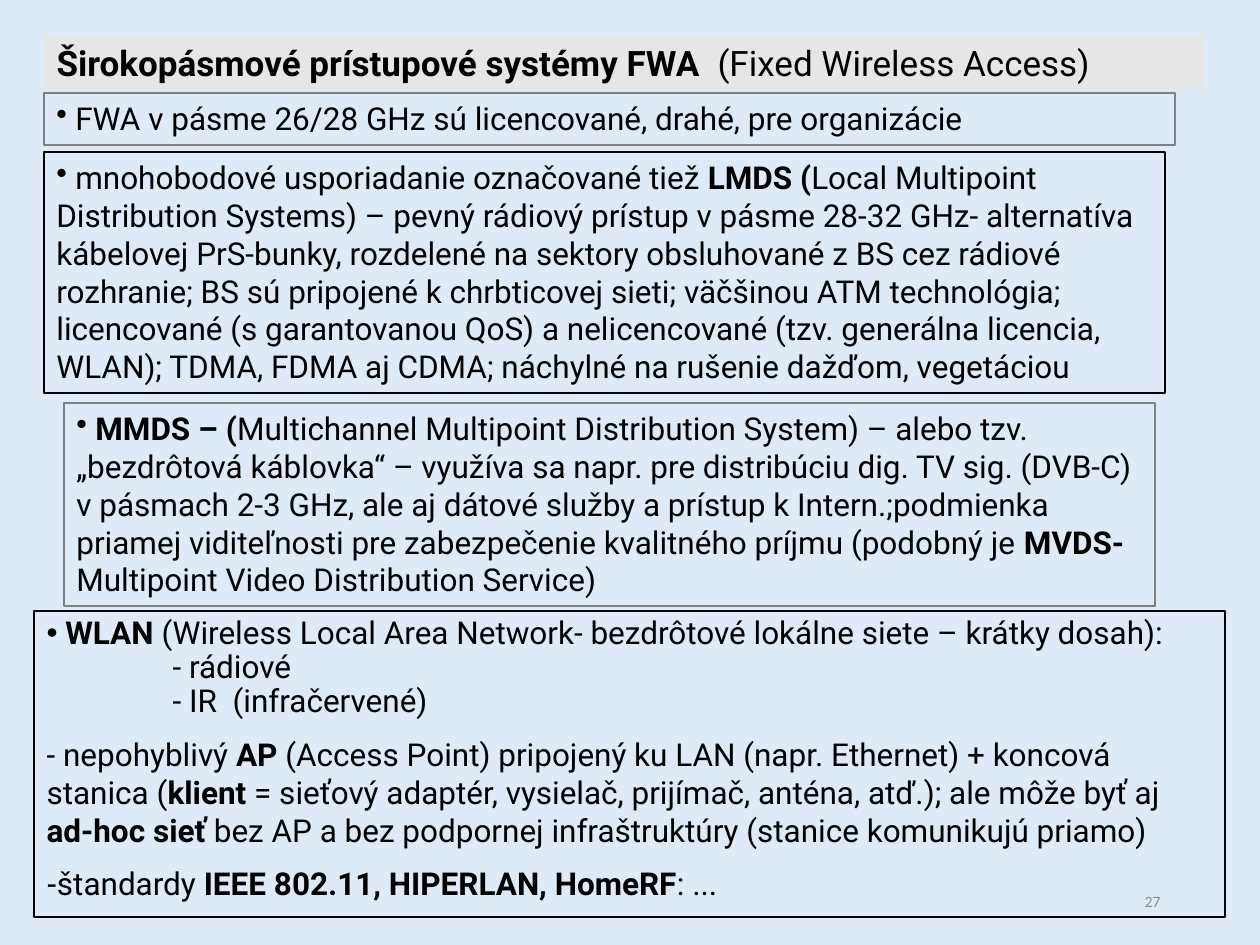
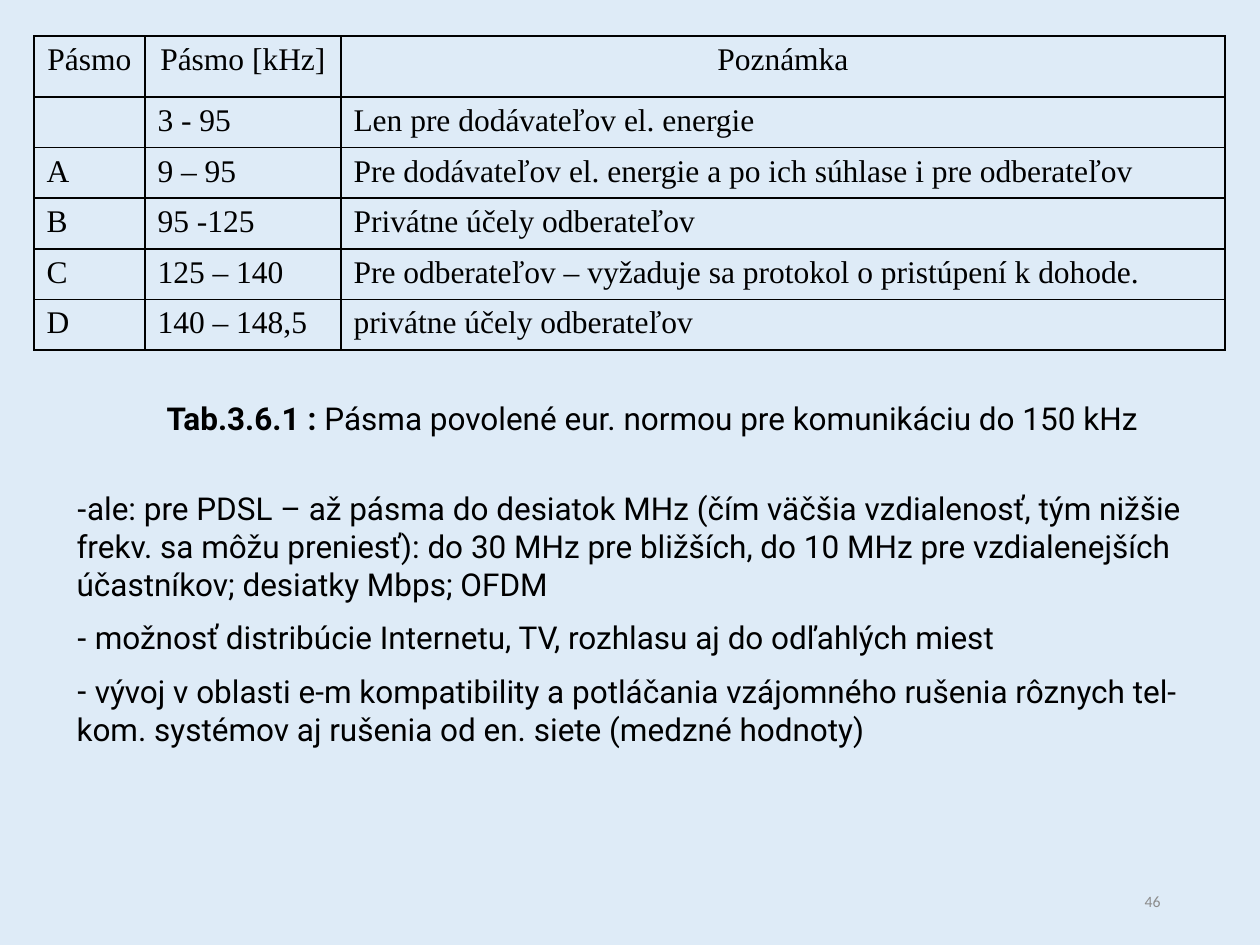
from collections import namedtuple
from dataclasses import dataclass

import lxml.etree
import pptx
import pptx.dml.color
import pptx.enum.text
import pptx.oxml.ns
import pptx.util

ALIGN = pptx.enum.text.PP_ALIGN
ANCHOR = pptx.enum.text.MSO_ANCHOR
qn = pptx.oxml.ns.qn


@dataclass(frozen=True)
class Theme:
    background: str = "DEEBF7"
    title_band: str = "E7E6E6"
    ink: str = "000000"
    gray: str = "808080"
    page_ink: str = "8C8C8C"
    text_font: str = "Roboto"
    table_font: str = "Times New Roman"
    page_font: str = "Calibri"
    title_size: int = 20
    text_size: int = 18
    page_size: int = 9
    paragraph_gap: int = 9
    outline: float = 0.75
    grid_line: int = 1


THEME = Theme()
EMU_PER_PX = 914400 / 126
SLIDE_SIZE = (1260, 945)
PAGE_BOX = (890, 876, 283, 50)
SUB_INDENT, SUB_HANG = 158, -32

# Text between ** marks is bold.
Line = namedtuple("Line", "text bullet level spacing", defaults=("", 0, None))

FWA_TITLE = "**Širokopásmové prístupové systémy FWA  **(Fixed Wireless Access)"
FWA_TITLE_BOX = (44, 35, 1160, 54)
FWA_PANELS = [
    ((44, 93, 1131, 52), THEME.gray,
     Line(" FWA v pásme 26/28 GHz sú licencované, drahé, pre organizácie", "•")),
    ((44, 152, 1121, 241), THEME.ink,
     Line(" mnohobodové usporiadanie označované tiež **LMDS (**Local Multipoint "
          "Distribution Systems) – pevný rádiový prístup v pásme 28-32 GHz- "
          "alternatíva kábelovej PrS-bunky, rozdelené na sektory obsluhované z BS "
          "cez rádiové rozhranie; BS sú pripojené k chrbticovej sieti; väčšinou ATM "
          "technológia; licencované (s garantovanou QoS) a nelicencované (tzv. "
          "generálna licencia, WLAN); TDMA, FDMA aj CDMA; náchylné na rušenie "
          "dažďom, vegetáciou", "•")),
    ((64, 403, 1091, 203), THEME.gray,
     Line("** MMDS – (**Multichannel Multipoint Distribution System) – alebo tzv. "
          "„bezdrôtová káblovka“ – využíva sa napr. pre distribúciu dig. TV sig. "
          "(DVB-C) v pásmach 2-3 GHz, ale aj dátové služby a prístup k "
          "Intern.;podmienka priamej viditeľnosti pre zabezpečenie kvalitného príjmu "
          "(podobný je **MVDS-**Multipoint Video Distribution Service)", "•")),
]
WLAN_BOX = (34, 611, 1191, 306)
WLAN = [
    Line("** WLAN** (Wireless Local Area Network- bezdrôtové lokálne siete – krátky "
         "dosah):", "•", spacing=0.9),
    Line("- rádiové", level=2, spacing=0.9),
    Line("- IR  (infračervené)", level=2, spacing=0.9),
    Line("- nepohyblivý **AP** (Access Point) pripojený ku LAN (napr. Ethernet) + "
         "koncová stanica (**klient** = sieťový adaptér, vysielač, prijímač, anténa, "
         "atď.); ale môže byť aj **ad-hoc sieť** bez AP a bez podpornej "
         "infraštruktúry (stanice komunikujú priamo)"),
    Line("štandardy **IEEE 802.11, HIPERLAN, HomeRF**: ...", "-"),
]

BANDS_BOX = (34, 36, 1191, 314)
BANDS_COLUMNS = (111, 196, 884)
BANDS_HEADER_HEIGHT = 61
BANDS = [
    ("Pásmo", "Pásmo [kHz]", "Poznámka"),
    ("", "3 - 95", "Len pre dodávateľov el. energie"),
    ("A", "9 – 95", "Pre dodávateľov el. energie a po ich súhlase i pre odberateľov"),
    ("B", "95 -125", "Privátne účely odberateľov"),
    ("C", "125 – 140", "Pre odberateľov – vyžaduje sa protokol o pristúpení k dohode."),
    ("D", "140 – 148,5", "privátne účely odberateľov"),
]
BANDS_CAPTION = ("**Tab.3.6.1 : **Pásma povolené eur. normou pre komunikáciu "
                 "do 150 kHz")
BANDS_CAPTION_BOX = (154, 393, 1022, 50)
PDSL_BOX = (64, 483, 1131, 280)
PDSL = [
    Line("ale: pre PDSL – až pásma do desiatok MHz (čím väčšia vzdialenosť, tým nižšie "
         "frekv. sa môžu preniesť): do 30 MHz pre bližších, do 10 MHz pre "
         "vzdialenejších účastníkov; desiatky Mbps; OFDM", "-"),
    Line(" možnosť distribúcie Internetu, TV, rozhlasu aj do odľahlých miest", "-"),
    Line(" vývoj v oblasti e-m kompatibility a potláčania vzájomného rušenia rôznych "
         "tel-kom. systémov aj rušenia od en. siete (medzné hodnoty)", "-"),
]


def px(length):
    return pptx.util.Emu(round(length * EMU_PER_PX))


def rgb(color):
    return pptx.dml.color.RGBColor.from_string(color)


def place(shape, box):
    shape.left, shape.top, shape.width, shape.height = map(px, box)


def style(paragraph, font_name, size, color=THEME.ink, align=ALIGN.LEFT):
    paragraph.alignment = align
    font = paragraph.font
    font.name, font.size = font_name, pptx.util.Pt(size)
    font.color.rgb = rgb(color)


def set_bullet(paragraph, line):
    properties = paragraph._p.get_or_add_pPr()
    properties.set("marL", str(px(SUB_INDENT if line.level else 0)))
    properties.set("indent", str(px(SUB_HANG if line.level else 0)))
    if line.bullet:
        lxml.etree.SubElement(properties, qn("a:buChar"), char=line.bullet)
    else:
        lxml.etree.SubElement(properties, qn("a:buNone"))


def write(shape, lines, size=THEME.text_size):
    frame = shape.text_frame
    frame.word_wrap = True
    frame.auto_size = pptx.enum.text.MSO_AUTO_SIZE.NONE
    frame.vertical_anchor = ANCHOR.TOP
    for number, line in enumerate(lines):
        paragraph = frame.add_paragraph() if number else frame.paragraphs[0]
        paragraph.level = line.level
        set_bullet(paragraph, line)
        style(paragraph, THEME.text_font, size)
        gap = THEME.paragraph_gap if number and not line.level else 0
        paragraph.space_before = pptx.util.Pt(gap)
        if line.spacing:
            paragraph.line_spacing = line.spacing
        for part, text in enumerate(line.text.split("**")):
            if text:
                run = paragraph.add_run()
                run.text = text
                run.font.bold = part % 2 == 1


def outline(shape, color):
    shape.line.color.rgb = rgb(color)
    shape.line.width = pptx.util.Pt(THEME.outline)


def add_slide(deck, page, title, title_box, title_size, body, body_box):
    slide = deck.slides.add_slide(deck.slide_layouts[1])
    heading, listing = slide.placeholders
    place(heading, title_box)
    write(heading, [Line(title)], title_size)
    place(listing, body_box)
    write(listing, body)

    number = slide.shapes.add_textbox(*map(px, PAGE_BOX)).text_frame
    number.word_wrap = True
    number.vertical_anchor = ANCHOR.MIDDLE
    number.text = page
    style(number.paragraphs[0], THEME.page_font, THEME.page_size,
          THEME.page_ink, ALIGN.RIGHT)
    return slide, heading, listing


def draw_grid(cell):
    """Clear the cell's fill and line all four of its sides."""
    cell.fill.background()
    properties = cell._tc.get_or_add_tcPr()
    for position, side in enumerate("LRTB"):
        border = lxml.etree.Element(qn("a:ln" + side),
                                    w=str(pptx.util.Pt(THEME.grid_line)))
        fill = lxml.etree.SubElement(border, qn("a:solidFill"))
        lxml.etree.SubElement(fill, qn("a:srgbClr"), val=THEME.ink)
        properties.insert(position, border)


def add_bands_table(slide):
    table = slide.shapes.add_table(len(BANDS), len(BANDS_COLUMNS),
                                   *map(px, BANDS_BOX)).table
    table.first_row = table.horz_banding = False
    for column, width in zip(table.columns, BANDS_COLUMNS):
        column.width = px(width)
    row_height = (BANDS_BOX[3] - BANDS_HEADER_HEIGHT) / (len(BANDS) - 1)
    for r, band in enumerate(BANDS):
        table.rows[r].height = px(row_height if r else BANDS_HEADER_HEIGHT)
        for c, text in enumerate(band):
            cell = table.cell(r, c)
            cell.text = text
            style(cell.text_frame.paragraphs[0], THEME.table_font, THEME.text_size,
                  align=ALIGN.LEFT if r else ALIGN.CENTER)
            draw_grid(cell)


def main():
    deck = pptx.Presentation()
    deck.slide_width, deck.slide_height = map(px, SLIDE_SIZE)
    background = deck.slide_master.background.fill
    background.solid()
    background.fore_color.rgb = rgb(THEME.background)

    fwa, title, wlan = add_slide(deck, "27", FWA_TITLE, FWA_TITLE_BOX,
                                 THEME.title_size, WLAN, WLAN_BOX)
    title.fill.solid()
    title.fill.fore_color.rgb = rgb(THEME.title_band)
    outline(wlan, THEME.ink)
    for box, color, line in FWA_PANELS:
        panel = fwa.shapes.add_textbox(*map(px, box))
        outline(panel, color)
        write(panel, [line])

    bands, _, _ = add_slide(deck, "46", BANDS_CAPTION, BANDS_CAPTION_BOX,
                            THEME.text_size, PDSL, PDSL_BOX)
    add_bands_table(bands)
    deck.save("out.pptx")


if __name__ == "__main__":
    main()
